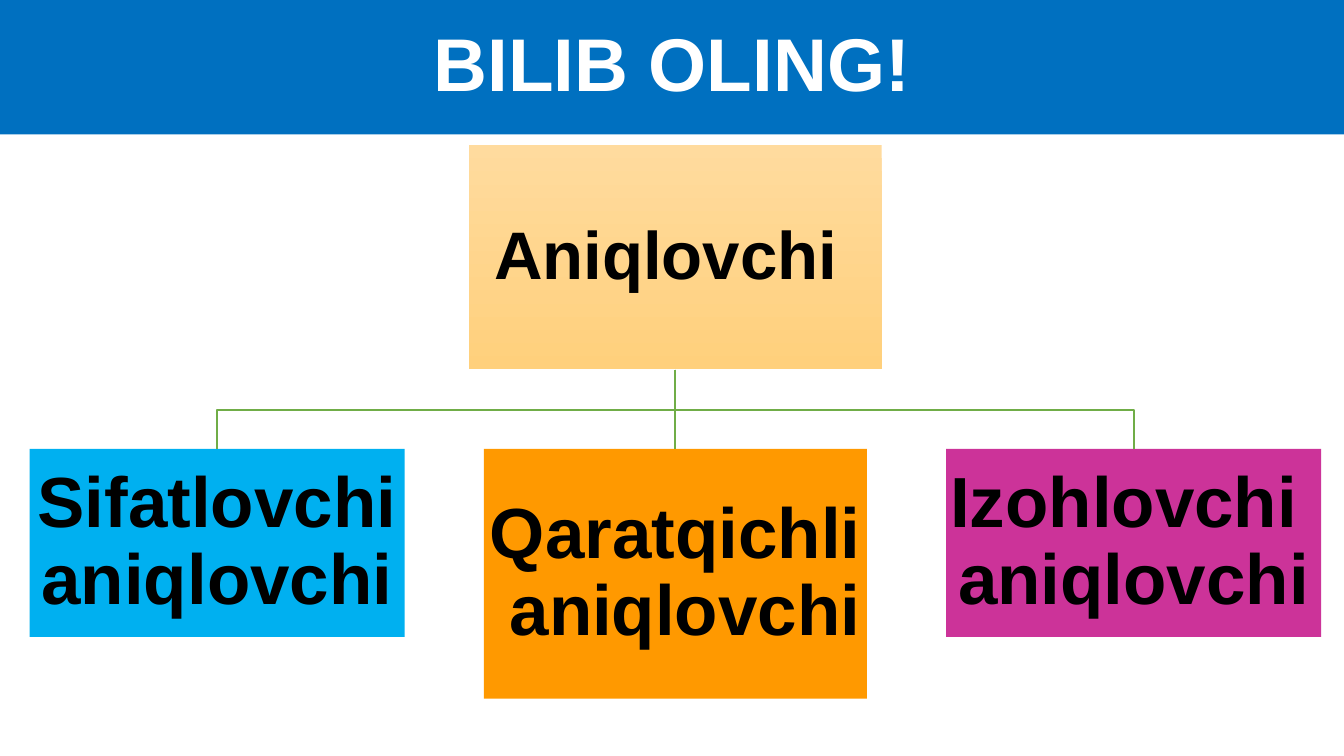
"""Build a slide with a hierarchy of one root term and its three kinds."""
from dataclasses import dataclass

from lxml import etree
from pptx import Presentation
from pptx.dml.color import RGBColor
from pptx.enum.shapes import MSO_CONNECTOR, MSO_SHAPE
from pptx.enum.text import MSO_ANCHOR, MSO_AUTO_SIZE, PP_ALIGN
from pptx.oxml.ns import qn
from pptx.util import Inches, Pt

RECTANGLE = MSO_SHAPE.RECTANGLE
STRAIGHT = MSO_CONNECTOR.STRAIGHT
MIDDLE = MSO_ANCHOR.MIDDLE
NO_AUTOFIT = MSO_AUTO_SIZE.NONE
CENTER = PP_ALIGN.CENTER

COLORS = {
    "banner": "0070C0",
    "white": "FFFFFF",
    "black": "000000",
    "branch": "70AD47",
    "root_top": "FFDB9E",
    "root_bottom": "FFD07C",
    "blue": "00B0F0",
    "orange": "FF9900",
    "magenta": "CC3399",
}
TITLE_ONLY = 5
BOTTOM_SITE, TOP_SITE = 2, 0
SLIDE_WIDTH = Inches(10)
SLIDE_HEIGHT = SLIDE_WIDTH * 9 // 16
ROOT_LEFT, ROOT_WIDTH = 3.49, 3.07
AXIS = ROOT_LEFT + ROOT_WIDTH / 2
SPACING = 3.41
ROOT_TOP, KIND_TOP = 1.08, 3.34
FORK = 3.05


@dataclass(frozen=True)
class Box:
    """A term of the hierarchy, placed by the middle of its top edge."""

    text: str
    center: float
    top: float
    width: float
    height: float
    size: int
    colors: tuple[str, ...]


ROOT = Box("Aniqlovchi ", AXIS, ROOT_TOP, ROOT_WIDTH, 1.67, 36, ("root_top", "root_bottom"))
KINDS = (
    Box("Sifatlovchi aniqlovchi", AXIS - SPACING, KIND_TOP, 2.79, 1.4, 38, ("blue",)),
    Box("Qaratqichli\v aniqlovchi", AXIS, KIND_TOP, 2.85, 1.86, 38, ("orange",)),
    Box("Izohlovchi \vaniqlovchi", AXIS + SPACING, KIND_TOP, 2.79, 1.4, 38, ("magenta",)),
)


def color(name: str) -> RGBColor:
    """Return the named colour."""
    return RGBColor.from_string(COLORS[name])


def write_text(shape, text: str, *, size: int, font_color: str, margin: float) -> None:
    """Write bold centred text into a shape."""
    frame = shape.text_frame
    frame.word_wrap = True
    frame.auto_size = NO_AUTOFIT
    frame.vertical_anchor = MIDDLE
    frame.margin_left = frame.margin_right = Inches(margin)
    frame.margin_top = frame.margin_bottom = Inches(margin)
    paragraph = frame.paragraphs[0]
    paragraph.text = text
    paragraph.alignment = CENTER
    paragraph.line_spacing = 0.9
    for run in paragraph.runs:
        run.font.name = "Arial"
        run.font.size = Pt(size)
        run.font.bold = True
        run.font.color.rgb = color(font_color)


def add_title(slide, text: str) -> None:
    """Turn the title placeholder into a full-width banner."""
    title = slide.shapes.title
    title.left, title.top = Inches(0), Inches(0)
    title.width, title.height = SLIDE_WIDTH, Inches(1)
    title.fill.solid()
    title.fill.fore_color.rgb = color("banner")
    write_text(title, text, size=40, font_color="white", margin=0.05)


def add_box(slide, box: Box):
    """Add a term box with a plain or gradient fill."""
    shape = slide.shapes.add_shape(
        RECTANGLE, Inches(box.center - box.width / 2), Inches(box.top),
        Inches(box.width), Inches(box.height))
    shape.shadow.inherit = False
    shape.line.fill.background()
    if len(box.colors) == 1:
        shape.fill.solid()
        shape.fill.fore_color.rgb = color(box.colors[0])
    else:
        shape.fill.gradient()
        shape.fill.gradient_angle = 270
        for stop, name in zip(shape.fill.gradient_stops, box.colors):
            stop.color.rgb = color(name)
    write_text(shape, box.text, size=box.size, font_color="black", margin=0.03)
    return shape


def format_branch(branch) -> None:
    """Give a branch its thin green line."""
    branch.line.color.rgb = color("branch")
    branch.line.width = Pt(1)


def add_side_branch(slide, root: Box, kind: Box) -> None:
    """Draw a bent branch from the root to a kind at its side."""
    root_bottom = root.top + root.height
    builder = slide.shapes.build_freeform(
        Inches(root.center), Inches(root_bottom), scale=1.0)
    corners = ((root.center, FORK), (kind.center, FORK), (kind.center, kind.top))
    builder.add_line_segments(
        [(Inches(x), Inches(y)) for x, y in corners], close=False)
    branch = builder.convert_to_shape()
    branch.shadow.inherit = False
    branch.fill.background()
    format_branch(branch)


def add_straight_branch(slide, root_shape, kind_shape) -> None:
    """Join the root to the kind right below it."""
    branch = slide.shapes.add_connector(STRAIGHT, 0, 0, 0, 0)
    branch.begin_connect(root_shape, BOTTOM_SITE)
    branch.end_connect(kind_shape, TOP_SITE)
    format_branch(branch)
    etree.SubElement(branch.element.spPr, qn("a:effectLst"))


def main() -> None:
    """Build and save the presentation."""
    presentation = Presentation()
    presentation.slide_width = SLIDE_WIDTH
    presentation.slide_height = SLIDE_HEIGHT
    slide = presentation.slides.add_slide(presentation.slide_layouts[TITLE_ONLY])
    add_title(slide, "BILIB OLING!")
    root_shape = add_box(slide, ROOT)
    for kind in KINDS:
        kind_shape = add_box(slide, kind)
        if kind.center == ROOT.center:
            add_straight_branch(slide, root_shape, kind_shape)
        else:
            add_side_branch(slide, ROOT, kind)
    presentation.save("out.pptx")


if __name__ == "__main__":
    main()
